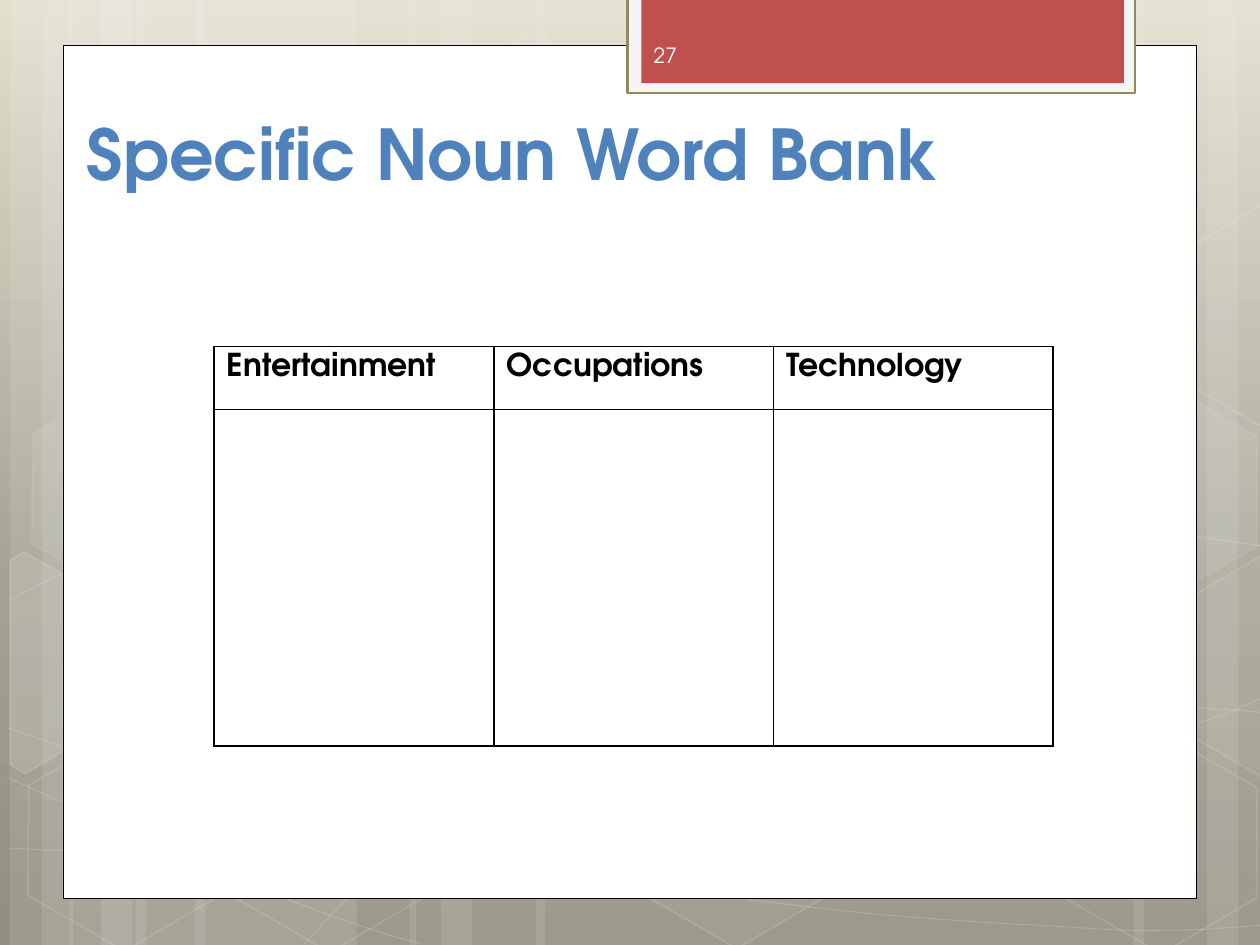
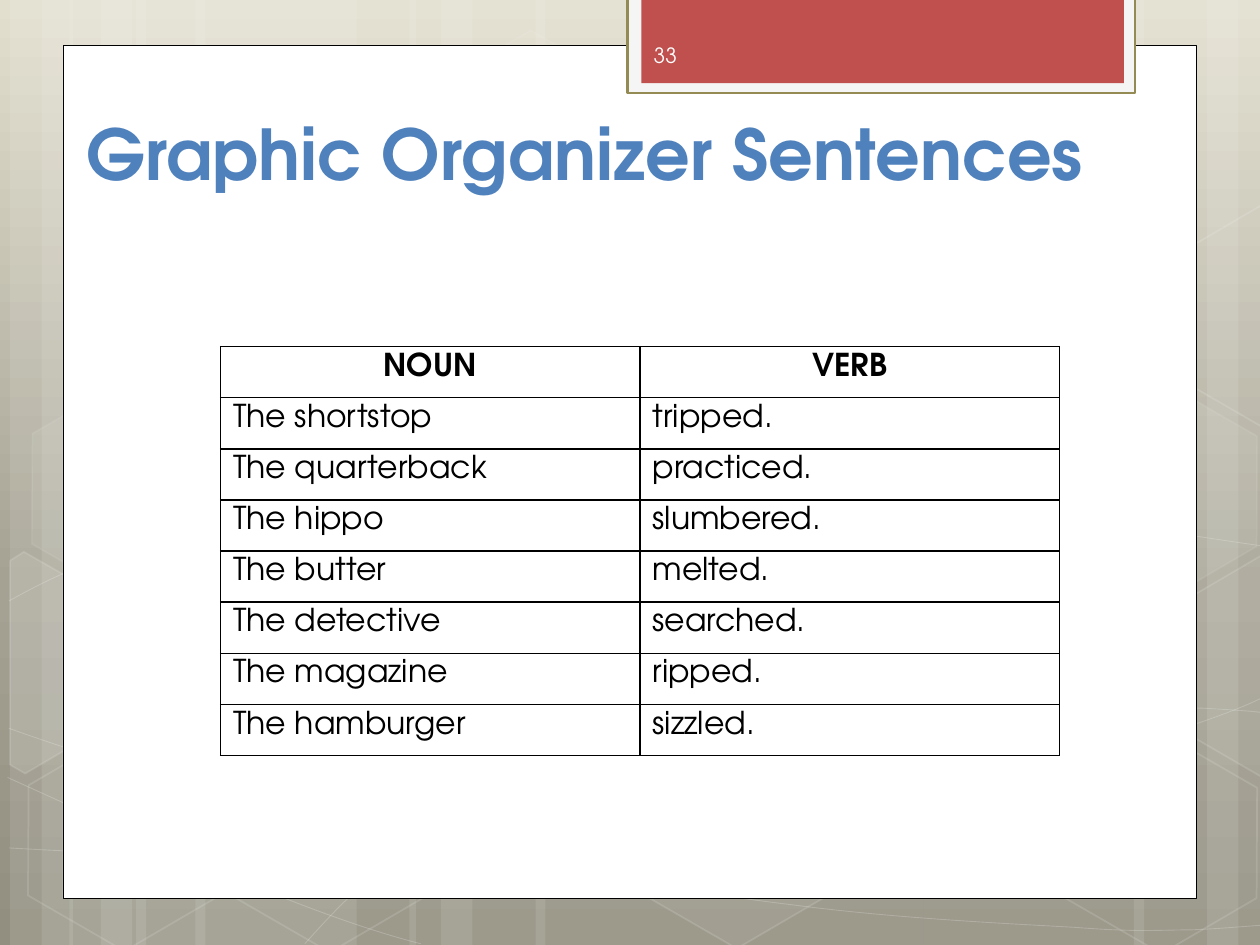
from copy import deepcopy
from dataclasses import dataclass
from typing import Any, NamedTuple, Optional

from lxml.etree import SubElement
from pptx import Presentation
from pptx.dml.color import RGBColor as Rgb
from pptx.enum.shapes import MSO_SHAPE as Preset
from pptx.enum.text import MSO_ANCHOR as Anchor, PP_ALIGN as Align
from pptx.oxml import parse_xml
from pptx.oxml.ns import nsdecls, qn
from pptx.util import Inches, Pt

SLIDE_WIDTH, SLIDE_HEIGHT = Inches(10), Inches(7.5)
COLUMNS, ROWS = 10, 7.5


@dataclass(frozen=True)
class Theme:
    font: str = "TeX Gyre Adventor"
    title_size: float = 40
    table_size: float = 18
    number_size: float = 12
    title: str = "4F81BD"
    number: str = "FEFEFE"
    ink: str = "000000"
    white: str = "FFFFFF"
    tab_frame: str = "F5F5F5"
    tab_edge: str = "948A54"
    tab: str = "C0504D"
    backdrop: tuple = ((0, "E2DFCF"), (0.62, "A5A293"), (1, "928F80"))


THEME = Theme()


class Box(NamedTuple):
    column: float
    row: float
    columns: float
    rows: float

    def emu(self) -> tuple[int, int, int, int]:
        return (across(self.column), down(self.row),
                across(self.columns), down(self.rows))


class Paint(NamedTuple):
    color: str
    opacity: int = 100


class Stroke(NamedTuple):
    color: str
    width: float
    opacity: int = 100


class Hexagon(NamedTuple):
    column: float
    row: float
    fill_opacity: int
    line_opacity: int


class CutHexagon(NamedTuple):
    corners: tuple
    fill_opacity: int


@dataclass(frozen=True)
class Lesson:
    title: str
    number: str
    table: Box
    header: tuple
    entries: tuple
    header_rows: float
    header_align: Align


PANEL = Box(0.5, 0.36, 9, 6.77)
TAB_FRAME = Box(4.98, -0.02, 4.03, 0.76)
TAB = Box(5.09, -0.02, 3.83, 0.68)
TITLE = Box(0.59, 0.34, 8.24, 1.25)
NUMBER = Box(5.09, 0.24, 1.46, 0.4)

LEFT_BANDS = ((1.08, 1.75), (0.08, 0.5), (0.33, 0.83))
LEFT_SHIFT = 0.47
BANDS = (
    *((column + shift, columns) for shift in (0, LEFT_SHIFT)
      for column, columns in LEFT_BANDS),
    (7.33, 1.75), (9.58, 0.5), (9, 0.83),
    (4.25, 3.08), (3.25, 0.5), (3.5, 0.83),
)

CURVES = (
    ((0.07, 6.73), (0.61, 6.76), (1.15, 6.79), (1.9, 6.78),
     (2.65, 6.77), (3.58, 6.75), (4.58, 6.65),
     (5.58, 6.55), (7, 6.36), (7.92, 6.17),
     (8.83, 5.98), (9.77, 5.68), (10.07, 5.51)),
    ((0.07, 4.77), (0.36, 4.61), (0.65, 4.46), (1.21, 4.31),
     (1.78, 4.16), (2.59, 3.94), (3.47, 3.87),
     (4.36, 3.8), (5.44, 3.79), (6.54, 3.87),
     (7.64, 3.95), (9.47, 4.26), (10.07, 4.34)),
    ((0.06, 6.17), (1.27, 6.72), (2.47, 7.27), (3.34, 7.49)),
    ((0.07, 5.78), (0.38, 5.89), (0.7, 6), (1.28, 6.16),
     (1.86, 6.31), (2.73, 6.56), (3.57, 6.73),
     (4.4, 6.9), (5.45, 7.08), (6.28, 7.18),
     (7.11, 7.29), (8, 7.33), (8.53, 7.36),
     (9.05, 7.4), (9.19, 7.38), (9.45, 7.38),
     (9.71, 7.37), (9.89, 7.35), (10.07, 7.34)),
    ((2.42, 7.49), (2.6, 7.29), (2.78, 7.09), (3.02, 6.91),
     (3.26, 6.73), (3.6, 6.53), (3.88, 6.39),
     (4.16, 6.25), (4.33, 6.19), (4.7, 6.09),
     (5.06, 5.99), (5.73, 5.85), (6.08, 5.78),
     (6.44, 5.71), (6.49, 5.71), (6.8, 5.69),
     (7.11, 5.66), (7.6, 5.63), (7.94, 5.62),
     (8.29, 5.61), (8.86, 5.62), (8.86, 5.62),
     (8.86, 5.62), (9.53, 5.62), (9.53, 5.62),
     (9.71, 5.63), (9.88, 5.64), (9.97, 5.65),
     (10.06, 5.66), (10.03, 5.65), (10.06, 5.66)),
)

HEXAGONS = (
    Hexagon(3.34, 0.36, 4, 8),
    Hexagon(4.97, 5.89, 6, 12),
    Hexagon(0.11, 5.91, 0, 12),
    Hexagon(0.14, 3.12, 7, 8),
    Hexagon(1.74, 5.92, 0, 12),
    Hexagon(8.34, 5.93, 0, 12),
    Hexagon(8.34, 3.14, 7, 8),
)

CUT_HEXAGONS = (
    CutHexagon(((0.08, 4.45), (0.19, 4.38), (0.96, 4.82),
                (0.95, 5.7), (0.2, 6.14), (0.08, 6.07)), 10),
    CutHexagon(((9.26, 4.85), (10.01, 4.41), (10.09, 4.46),
                (10.09, 6.13), (10.02, 6.17), (9.26, 5.73)), 4),
    CutHexagon(((9.26, 2.07), (10.01, 1.63), (10.1, 1.68),
                (10.09, 3.35), (10.02, 3.39), (9.26, 2.95)), 0),
)

LESSONS = (
    Lesson("Specific Noun Word Bank", "27", Box(1.7, 2.75, 6.66, 3.17),
           ("Entertainment", "Occupations", "Technology"),
           (("", "", ""),), 0.5, Align.LEFT),
    Lesson("Graphic Organizer Sentences", "33", Box(1.75, 2.75, 6.66, 3.25),
           ("NOUN", "VERB"),
           (("The shortstop", "tripped."),
            ("The quarterback", "practiced."),
            ("The hippo", "slumbered."),
            ("The butter", "melted."),
            ("The detective", "searched."),
            ("The magazine", "ripped."),
            ("The hamburger", "sizzled.")), 3.25 / 8, Align.CENTER),
)


def across(columns: float) -> int:
    return round(SLIDE_WIDTH * columns / COLUMNS)


def down(rows: float) -> int:
    return round(SLIDE_HEIGHT * rows / ROWS)


def set_opacity(holder: Any, percent: int) -> None:
    if percent < 100:
        color = holder.find(qn("a:solidFill"))[0]
        SubElement(color, qn("a:alpha"), val=str(percent * 1000))


def style(shape: Any, paint: Optional[Paint], stroke: Optional[Stroke]) -> None:
    shape.shadow.inherit = False
    properties = shape.element.spPr
    if paint and paint.opacity:
        shape.fill.solid()
        shape.fill.fore_color.rgb = Rgb.from_string(paint.color)
        set_opacity(properties, paint.opacity)
    else:
        shape.fill.background()
    if stroke:
        shape.line.color.rgb = Rgb.from_string(stroke.color)
        shape.line.width = Pt(stroke.width)
        set_opacity(properties.find(qn("a:ln")), stroke.opacity)
    else:
        shape.line.fill.background()


def draw_box(shapes: Any, box: Box, paint: Paint,
             stroke: Optional[Stroke] = None, preset: Preset = Preset.RECTANGLE) -> Any:
    shape = shapes.add_shape(preset, *box.emu())
    style(shape, paint, stroke)
    return shape


def draw_outline(shapes: Any, points: tuple, paint: Optional[Paint],
                 stroke: Stroke, closed: bool) -> Any:
    corners = [(across(x), down(y)) for x, y in points]
    builder = shapes.build_freeform(*corners[0])
    builder.add_line_segments(corners[1:], close=closed)
    shape = builder.convert_to_shape()
    style(shape, paint, stroke)
    return shape


def bend(outline: Any) -> None:
    segments = list(outline.element.iter(qn("a:lnTo")))
    for first in range(0, len(segments), 3):
        trio = segments[first:first + 3]
        bezier = SubElement(trio[0].getparent(), qn("a:cubicBezTo"))
        for segment in trio:
            bezier.append(segment[0])
            segment.getparent().remove(segment)


def write(frame: Any, text: str, size: float, color: str, bold: bool = False,
          align: Align = Align.LEFT) -> None:
    frame.text = text
    paragraph = frame.paragraphs[0]
    paragraph.alignment = align
    font = paragraph.runs[0].font if paragraph.runs else paragraph.font
    font.name, font.size, font.bold = THEME.font, Pt(size), bold
    font.color.rgb = Rgb.from_string(color)


def draw_text(shapes: Any, box: Box, anchor: Anchor, text: str, size: float,
              color: str, bold: bool = False) -> None:
    frame = shapes.add_textbox(*box.emu()).text_frame
    frame.word_wrap = True
    frame.vertical_anchor = anchor
    write(frame, text, size, color, bold)


def paint_background(master: Any) -> None:
    fill = master.background.fill
    fill.gradient()
    fill.gradient_angle = 270
    stops = master.element.find(".//" + qn("p:bg")).find(".//" + qn("a:gsLst"))
    stops.append(deepcopy(stops[0]))
    for stop, (position, color) in zip(fill.gradient_stops, THEME.backdrop):
        stop.position = position
        stop.color.rgb = Rgb.from_string(color)


def draw_backdrop(shapes: Any) -> None:
    backdrop = shapes.add_group_shape().shapes
    for column, columns in BANDS:
        draw_box(backdrop, Box(column, 0, columns, ROWS), Paint(THEME.white, 10))
    for controls in CURVES:
        bend(draw_outline(backdrop, controls, None,
                          Stroke(THEME.white, 0.5, 20), closed=False))
    for column, row, fill_opacity, line_opacity in HEXAGONS:
        hexagon = draw_box(backdrop, Box(column, row, 1.75, 1.52),
                           Paint(THEME.white, fill_opacity),
                           Stroke(THEME.white, 1, line_opacity), Preset.HEXAGON)
        hexagon.adjustments[0] = 0.285
        hexagon.rotation = 30
    for corners, fill_opacity in CUT_HEXAGONS:
        draw_outline(backdrop, corners, Paint(THEME.white, fill_opacity),
                     Stroke(THEME.white, 1, 12), closed=True)
    draw_box(shapes, PANEL, Paint(THEME.white), Stroke(THEME.ink, 0.5))
    draw_box(shapes, TAB_FRAME, Paint(THEME.tab_frame), Stroke(THEME.tab_edge, 1.25))
    draw_box(shapes, TAB, Paint(THEME.tab))


def share_backdrop(slide: Any, layout: Any) -> None:
    for placeholder in list(layout.placeholders):
        placeholder.element.getparent().remove(placeholder.element)
    draw_backdrop(slide.shapes)
    layout_tree = layout.element.find(".//" + qn("p:spTree"))
    for shape in list(slide.shapes):
        layout_tree.append(shape.element)


def draw_borders(cell: Any) -> None:
    properties = cell._tc.get_or_add_tcPr()
    for index, side in enumerate(("lnL", "lnR", "lnT", "lnB")):
        properties.insert(index, parse_xml(
            f'<a:{side} {nsdecls("a")} w="{Pt(1)}"><a:solidFill>'
            f'<a:srgbClr val="{THEME.ink}"/></a:solidFill></a:{side}>'))


def draw_table(shapes: Any, lesson: Lesson) -> None:
    lines = (lesson.header, *lesson.entries)
    entry_rows = (lesson.table.rows - lesson.header_rows) / len(lesson.entries)
    table = shapes.add_table(len(lines), len(lesson.header), *lesson.table.emu()).table
    table.first_row = table.horz_banding = False
    for column in table.columns:
        column.width = across(lesson.table.columns / len(lesson.header))
    for index, words in enumerate(lines):
        heading = index == 0
        table.rows[index].height = down(lesson.header_rows if heading else entry_rows)
        for cell, word in zip(table.rows[index].cells, words):
            cell.fill.background()
            draw_borders(cell)
            write(cell.text_frame, word, THEME.table_size, THEME.ink, heading,
                  lesson.header_align if heading else Align.LEFT)


def draw_lesson(shapes: Any, lesson: Lesson) -> None:
    draw_text(shapes, TITLE, Anchor.BOTTOM, lesson.title, THEME.title_size, THEME.title, True)
    draw_text(shapes, NUMBER, Anchor.MIDDLE, lesson.number, THEME.number_size, THEME.number)
    draw_table(shapes, lesson)


def main() -> None:
    deck = Presentation()
    deck.slide_width, deck.slide_height = SLIDE_WIDTH, SLIDE_HEIGHT
    paint_background(deck.slide_master)
    blank = deck.slide_layouts[6]
    slides = [deck.slides.add_slide(blank) for _ in LESSONS]
    share_backdrop(slides[0], blank)
    for slide, lesson in zip(slides, LESSONS):
        draw_lesson(slide.shapes, lesson)
    deck.save("out.pptx")


if __name__ == "__main__":
    main()
